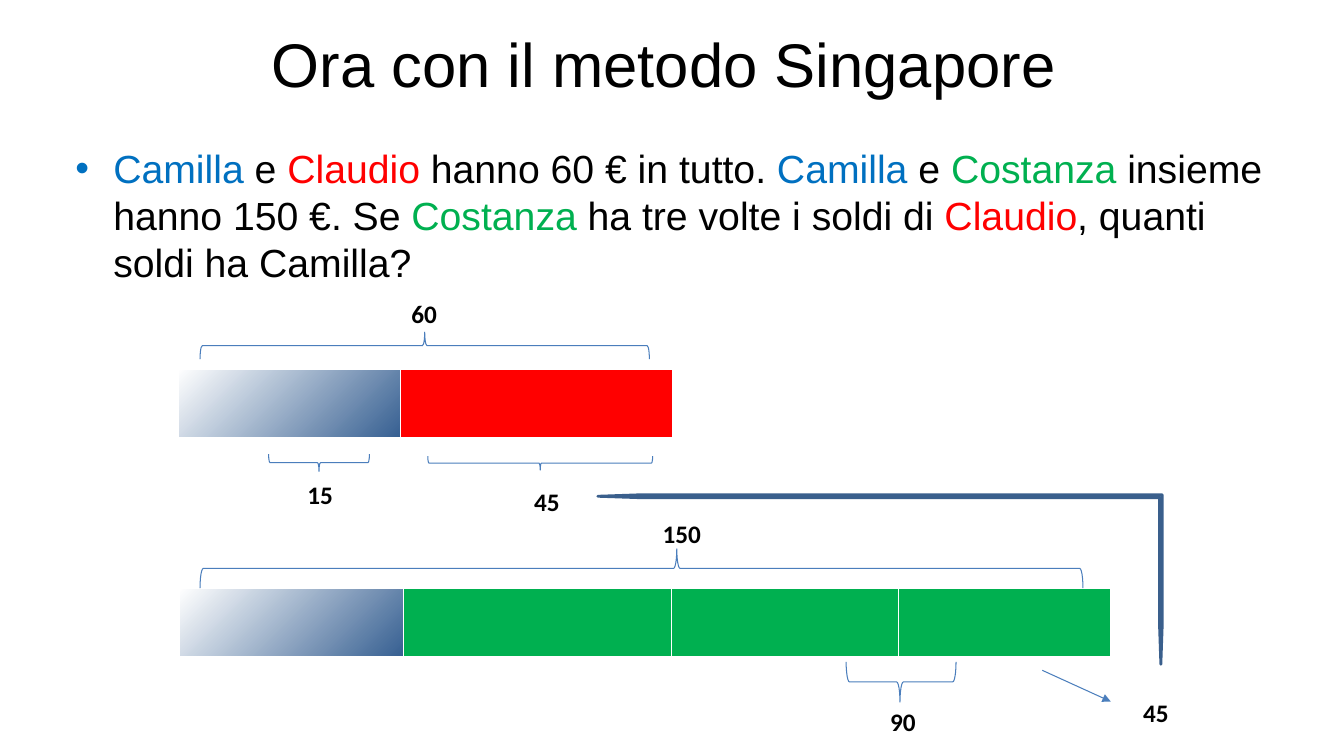
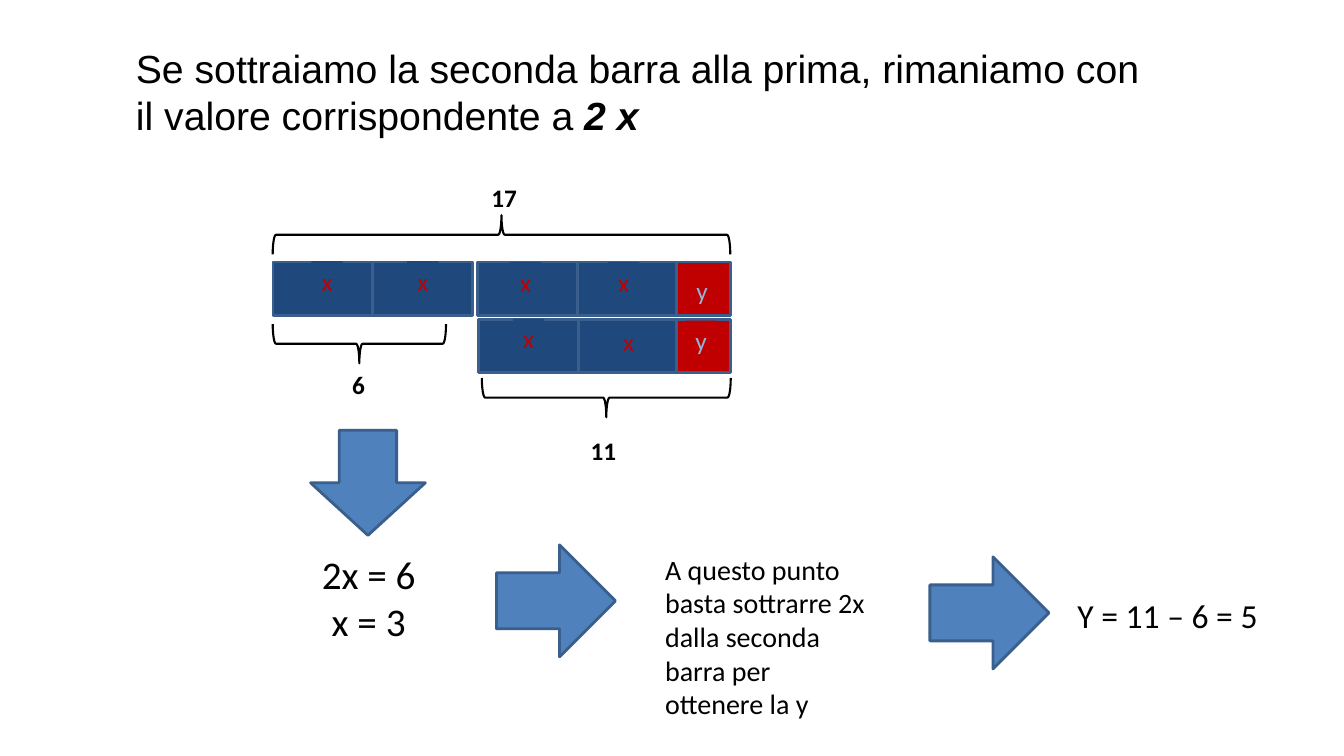
from lxml.etree import SubElement
from pptx import Presentation
from pptx.dml.color import RGBColor
from pptx.enum.shapes import MSO_CONNECTOR, MSO_SHAPE
from pptx.enum.text import MSO_ANCHOR, PP_ALIGN
from pptx.oxml.ns import qn
from pptx.util import Pt

BLACK = "000000"
WHITE = "FFFFFF"
ARROW_FILL = "4F81BD"
EDGE = "3A5F8C"
THIN_BLUE = "4B7EBC"
CAMILLA = "0070C0"
CLAUDIO = "FF0000"
COSTANZA = "00B050"
UNKNOWN = "376092"
X_FILL = "1F497D"
Y_FILL = "C00000"
Y_TEXT = "95B3D7"
SEGMENT_HEIGHT = 38.2


def rgb(value):
    return RGBColor.from_string(value)


def place(left, top, width, height):
    return Pt(left), Pt(top), Pt(width), Pt(height)


def fill_with(target, color):
    target.fill.solid()
    target.fill.fore_color.rgb = rgb(color)


def add_runs(paragraph, runs, size, font):
    """Each run is (text, color) or (text, color, emphasised)."""
    for text, color, *emphasis in runs:
        run = paragraph.add_run()
        run.text = text
        run.font.name = font
        run.font.size = Pt(size)
        run.font.color.rgb = rgb(color)
        if emphasis:
            run.font.bold = run.font.italic = True


def add_text(shapes, box, paragraphs, size, font="Calibri", align=PP_ALIGN.LEFT):
    text_box = shapes.add_textbox(*place(*box))
    frame = text_box.text_frame
    frame.word_wrap = True
    for index, runs in enumerate(paragraphs):
        paragraph = frame.add_paragraph() if index else frame.paragraphs[0]
        paragraph.alignment = align
        add_runs(paragraph, runs, size, font)
    return text_box


def add_value(slide, text, center, top):
    """Bold number centred under or over a brace."""
    value = add_text(slide.shapes, (center - 30, top, 60, 29), [[(text, BLACK)]],
                     18, align=PP_ALIGN.CENTER)
    value.text_frame.paragraphs[0].runs[0].font.bold = True


def add_preset(shapes, kind, box, fill=ARROW_FILL, line=EDGE, line_width=2):
    shape = shapes.add_shape(kind, *place(*box))
    shape.shadow.inherit = False
    if fill:
        fill_with(shape, fill)
    else:
        shape.fill.background()
    shape.line.color.rgb = rgb(line)
    shape.line.width = Pt(line_width)
    return shape


def add_turned(slide, kind, box, **style):
    """Preset turned by 270 degrees so that it covers the given box."""
    left, top, width, height = box
    shift = (width - height) / 2
    shape = add_preset(slide.shapes, kind,
                       (left + shift, top - shift, height, width), **style)
    shape.rotation = 270
    return shape


def add_brace(slide, box, up=False, tip=0.5, line=BLACK, line_width=1.5):
    kind = MSO_SHAPE.RIGHT_BRACE if up else MSO_SHAPE.LEFT_BRACE
    brace = add_turned(slide, kind, box, fill=None, line=line, line_width=line_width)
    brace.adjustments[1] = tip


def add_bar_table(slide, left, top, height, widths, colors):
    """One-row bar: a shaded unknown part, then the coloured parts."""
    table = slide.shapes.add_table(
        1, len(widths), *place(left, top, sum(widths), height)).table
    for column, width in zip(table.columns, widths):
        column.width = Pt(width)
    unknown, *parts = table.rows[0].cells
    unknown.fill.gradient()
    unknown.fill.gradient_angle = 315
    for stop, color in zip(unknown.fill.gradient_stops, (WHITE, UNKNOWN)):
        stop.color.rgb = rgb(color)
    for part, color in zip(parts, colors):
        fill_with(part, color)


def add_letter_bar(slide, top, segments):
    """Segments are (letter, left, letter left, letter top)."""
    shapes = slide.shapes.add_group_shape().shapes
    looks = {"x": (71.3, X_FILL, Y_FILL), "y": (38.7, Y_FILL, Y_TEXT)}
    for letter, left, _, _ in segments:
        width, fill, _ = looks[letter]
        add_preset(shapes, MSO_SHAPE.RECTANGLE, (left, top, width, SEGMENT_HEIGHT), fill)
    for letter, _, letter_left, letter_top in segments:
        _, fill, color = looks[letter]
        label = add_text(shapes, (letter_left, letter_top, 22.3, 29),
                         [[(letter, color)]], 18, align=PP_ALIGN.CENTER)
        label.text_frame.margin_left = label.text_frame.margin_right = 0
        fill_with(label, fill)


def add_bullet(paragraph):
    properties = paragraph._p.get_or_add_pPr()
    properties.set("marL", str(Pt(27)))
    properties.set("indent", str(Pt(-27)))
    SubElement(properties, qn("a:buFont"), typeface="Arial")
    SubElement(properties, qn("a:buChar"), char="•")


def add_thin_arrow(slide, start, end):
    arrow = slide.shapes.add_connector(
        MSO_CONNECTOR.STRAIGHT, *place(*start, *end))
    arrow.line.color.rgb = rgb(THIN_BLUE)
    arrow.line.width = Pt(0.75)
    SubElement(arrow.line._get_or_add_ln(), qn("a:tailEnd"), type="triangle")
    SubElement(arrow._element.spPr, qn("a:effectLst"))


def build_method(slide):
    title = add_text(slide.shapes, (42.5, 0, 864, 90),
                     [[("Ora con il metodo Singapore", BLACK)]],
                     44, "Arial", PP_ALIGN.CENTER)
    title.text_frame.vertical_anchor = MSO_ANCHOR.MIDDLE

    camilla, claudio, costanza = (
        ("Camilla", CAMILLA), ("Claudio", CLAUDIO), ("Costanza", COSTANZA))
    problem = add_text(slide.shapes, (46.8, 99.4, 867.6, 108), [[
        camilla, (" e ", BLACK), claudio, (" hanno 60 € in tutto. ", BLACK),
        camilla, (" e ", BLACK), costanza, (" insieme hanno 150 €. Se ", BLACK),
        costanza, (" ha tre volte i soldi di ", BLACK), claudio,
        (", quanti soldi ha Camilla?", BLACK)]], 28, "Arial")
    add_bullet(problem.text_frame.paragraphs[0])

    add_bar_table(slide, 128.2, 420.5, 48.2, (160, 191.5, 162, 151.5), [COSTANZA] * 3)
    for box, up, tip in (
            ((142.9, 237.2, 321, 19.4), True, 0.5),
            ((191.9, 324.4, 72, 12.2), False, 0.5),
            ((305.6, 325.8, 160.6, 10), False, 0.5),
            ((142.9, 392, 630.7, 28), True, 0.54),
            ((604.4, 472.7, 78.5, 28.8), False, 0.49)):
        add_brace(slide, box, up, tip, THIN_BLUE, 0.75)
    for text, center, top in (
            ("60", 303, 209.5), ("15", 228.6, 339), ("45", 390.7, 344),
            ("150", 487, 366.5), ("90", 645, 501), ("45", 825.7, 494.6)):
        add_value(slide, text, center, top)
    add_thin_arrow(slide, (744.5, 478.8), (793.4, 501.1))

    same_value = add_turned(slide, MSO_SHAPE.LEFT_UP_ARROW, (427, 353.5, 403.2, 121))
    for index, ratio in enumerate((0.25, 0.008, 0.235)):
        same_value.adjustments[index] = ratio
    add_bar_table(slide, 127.4, 263.5, 49, (158.4, 194.4), [CLAUDIO])


def build_subtraction(slide):
    add_text(slide.shapes, (90, 28, 733.7, 75), [[
        ("Se sottraiamo la seconda barra alla prima, rimaniamo con il valore "
         "corrispondente a ", BLACK), ("2 x", BLACK, True)]], 28, "Arial")

    add_letter_bar(slide, 187.2, (
        ("x", 195, 222.5, 186.5), ("x", 266.3, 290.9, 186.5),
        ("x", 341.3, 364.3, 187.2), ("x", 412.6, 434.2, 187.2),
        ("y", 483.1, 490.3, 193)))
    add_letter_bar(slide, 228.2, (
        ("x", 342, 366.5, 227.5), ("x", 413.3, 437.8, 229.7),
        ("y", 483.1, 489.6, 229)))

    for box, up in (((194.8, 153.7, 326.9, 28), True),
                    ((194.8, 231.5, 123.8, 28), False),
                    ((344.2, 270, 177.8, 28), False)):
        add_brace(slide, box, up)
    for text, center, top in (("17", 360, 126.7), ("6", 256, 260), ("11", 431, 307.4)):
        add_value(slide, text, center, top)

    add_preset(slide.shapes, MSO_SHAPE.DOWN_ARROW, (221.8, 307.4, 82, 75))
    for left, top in ((354.6, 389.2), (664.2, 397.8)):
        add_preset(slide.shapes, MSO_SHAPE.RIGHT_ARROW, (left, top, 85, 80))

    add_text(slide.shapes, (182, 389.5, 162.7, 75),
             [[("2x = 6", BLACK)], [("x = 3", BLACK)]], 28, align=PP_ALIGN.CENTER)
    add_text(slide.shapes, (468, 391, 162.7, 128), [[
        ("A questo punto basta sottrarre 2x dalla seconda barra per ottenere la y",
         BLACK)]], 20)
    add_text(slide.shapes, (762.5, 421.2, 162.7, 36), [[("Y = 11 – 6 = 5", BLACK)]], 24)


def main():
    deck = Presentation()
    deck.slide_width, deck.slide_height = Pt(960), Pt(540)
    for build in (build_method, build_subtraction):
        build(deck.slides.add_slide(deck.slide_layouts[6]))
    deck.save("out.pptx")


if __name__ == "__main__":
    main()
